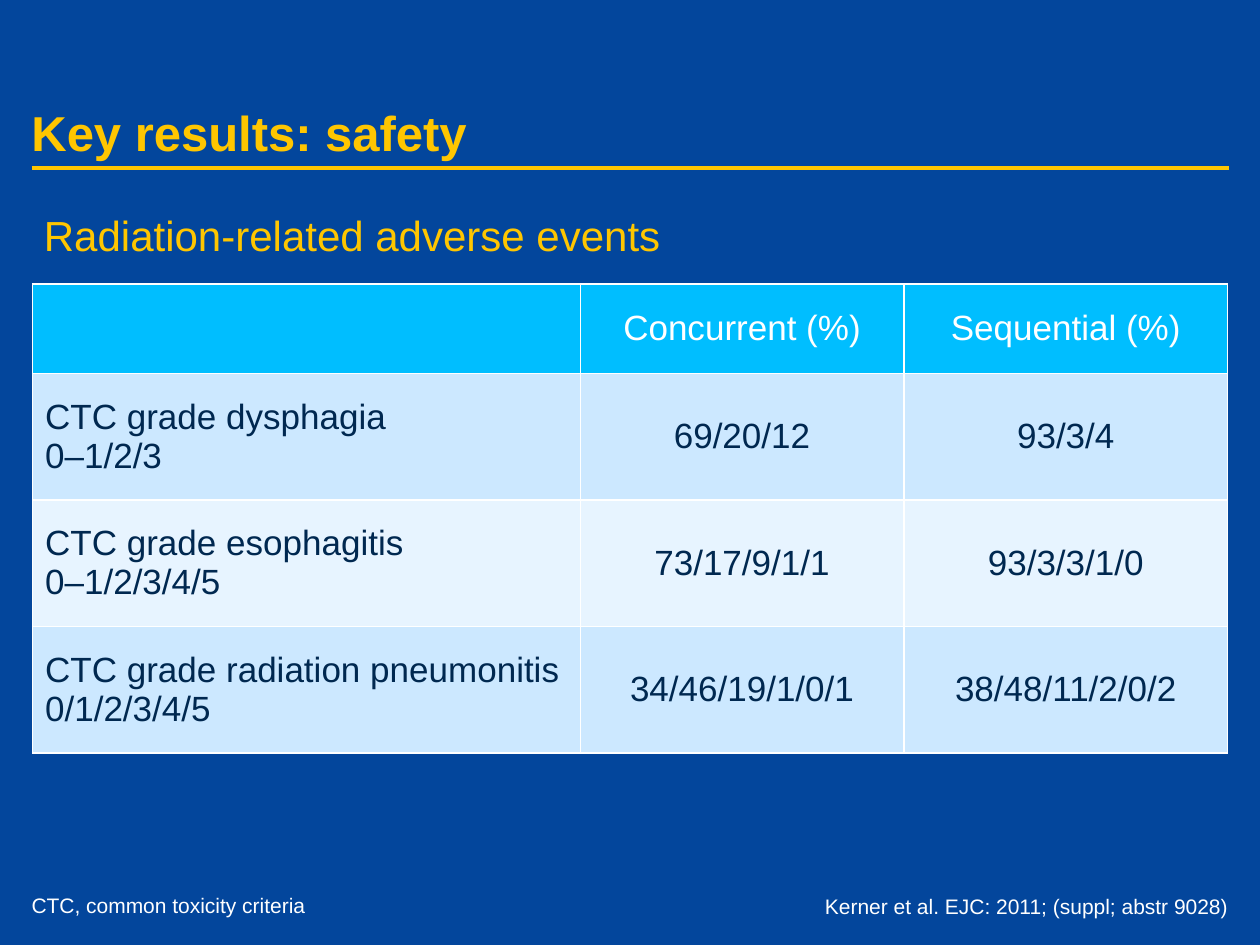
import pptx
import pptx.dml.color
import pptx.enum.shapes
import pptx.enum.text
import pptx.oxml
import pptx.oxml.ns
import pptx.util
from dataclasses import dataclass

Pt = pptx.util.Pt
RGB = pptx.dml.color.RGBColor.from_string
ALIGN = pptx.enum.text.PP_ALIGN
ANCHOR = pptx.enum.text.MSO_ANCHOR


@dataclass(frozen=True)
class Theme:
    font: str = "Arial"
    background: str = "03469C"
    accent: str = "FFC600"
    light: str = "FFFFFF"
    dark: str = "002850"
    header: str = "00BEFF"
    bands: tuple = ("CCE8FF", "E7F4FF")
    title_size: int = 28
    subtitle_size: int = 24
    table_size: int = 20
    note_size: int = 12


theme = Theme()


def style(paragraph, size, color, align=ALIGN.LEFT, bold=False):
    paragraph.alignment = align
    font = paragraph.font
    font.name, font.size, font.bold = theme.font, Pt(size), bold
    font.color.rgb = RGB(color)


def add_text(box, text, size, color, align=ALIGN.LEFT, anchor=ANCHOR.BOTTOM,
             insets=(0, 0, 0, 0), wrap=True, bold=False):
    """Add a text box; box is left, top, width, height in points."""
    frame = slide.shapes.add_textbox(*map(Pt, box)).text_frame
    frame.word_wrap = wrap
    frame.vertical_anchor = anchor
    (frame.margin_left, frame.margin_top,
     frame.margin_right, frame.margin_bottom) = map(Pt, insets)
    paragraph = frame.paragraphs[0]
    paragraph.text = text
    style(paragraph, size, color, align, bold)
    return paragraph


deck = pptx.Presentation()
deck.slide_width, deck.slide_height = Pt(720), Pt(540)
slide = deck.slides.add_slide(deck.slide_layouts[6])
slide.background.fill.solid()
slide.background.fill.fore_color.rgb = RGB(theme.background)

# Title and the rule below it
title_rule = slide.shapes.add_connector(
    pptx.enum.shapes.MSO_CONNECTOR.STRAIGHT, Pt(18), Pt(96), Pt(702), Pt(96))
title_rule.line.color.rgb = RGB(theme.accent)
title_rule.line.width = Pt(2.25)
title_rule._element.spPr.append(pptx.oxml.parse_xml(
    f'<a:effectLst {pptx.oxml.ns.nsdecls("a")}/>'))
add_text((18, 18, 684, 74), "Key results: safety", theme.title_size,
         theme.accent, insets=(0, 3.6, 0, 0), bold=True)

# Adverse events table
events = [
    ("", "Concurrent (%)", "Sequential (%)"),
    ("CTC grade dysphagia\v0–1/2/3", "69/20/12", "93/3/4"),
    ("CTC grade esophagitis\v0–1/2/3/4/5", "73/17/9/1/1", "93/3/3/1/0"),
    ("CTC grade radiation pneumonitis\v0/1/2/3/4/5", "34/46/19/1/0/1", "38/48/11/2/0/2"),
]
column_widths = (313, 185, 185)
row_heights = (51.2, 72.3, 72.3, 72.3)
table = slide.shapes.add_table(
    len(events), len(column_widths), Pt(18.6), Pt(162.2),
    Pt(sum(column_widths)), Pt(sum(row_heights))).table
for column, width in zip(table.columns, column_widths):
    column.width = Pt(width)
for row, height in zip(table.rows, row_heights):
    row.height = Pt(height)

for r, event in enumerate(events):
    for c, text in enumerate(event):
        cell = table.cell(r, c)
        cell.vertical_anchor = ANCHOR.MIDDLE
        for edge in ("lnL", "lnR", "lnT", "lnB"):
            cell._tc.get_or_add_tcPr().append(pptx.oxml.parse_xml(
                f'<a:{edge} {pptx.oxml.ns.nsdecls("a")} w="{Pt(1)}"><a:solidFill>'
                f'<a:srgbClr val="{theme.light}"/></a:solidFill></a:{edge}>'))
        cell.fill.solid()
        cell.fill.fore_color.rgb = RGB(theme.bands[(r - 1) % 2] if r else theme.header)
        paragraph = cell.text_frame.paragraphs[0]
        paragraph.text = text
        style(paragraph, theme.table_size, theme.dark if r else theme.light,
              ALIGN.CENTER if c else ALIGN.LEFT)

subtitle = add_text((18, 116, 444, 36), "Radiation-related adverse events",
                    theme.subtitle_size, theme.accent, anchor=ANCHOR.TOP,
                    insets=(7.2, 3.6, 7.2, 3.6))
subtitle.space_before = Pt(3)

# Footnotes
add_text((466.6, 510.5, 235.4, 14.4), "Kerner et al. EJC: 2011; (suppl; abstr 9028)",
         theme.note_size, theme.light, ALIGN.RIGHT, wrap=False)
add_text((18, 510, 162, 14.4), "CTC, common toxicity criteria",
         theme.note_size, theme.light, wrap=False)

deck.save("out.pptx")
